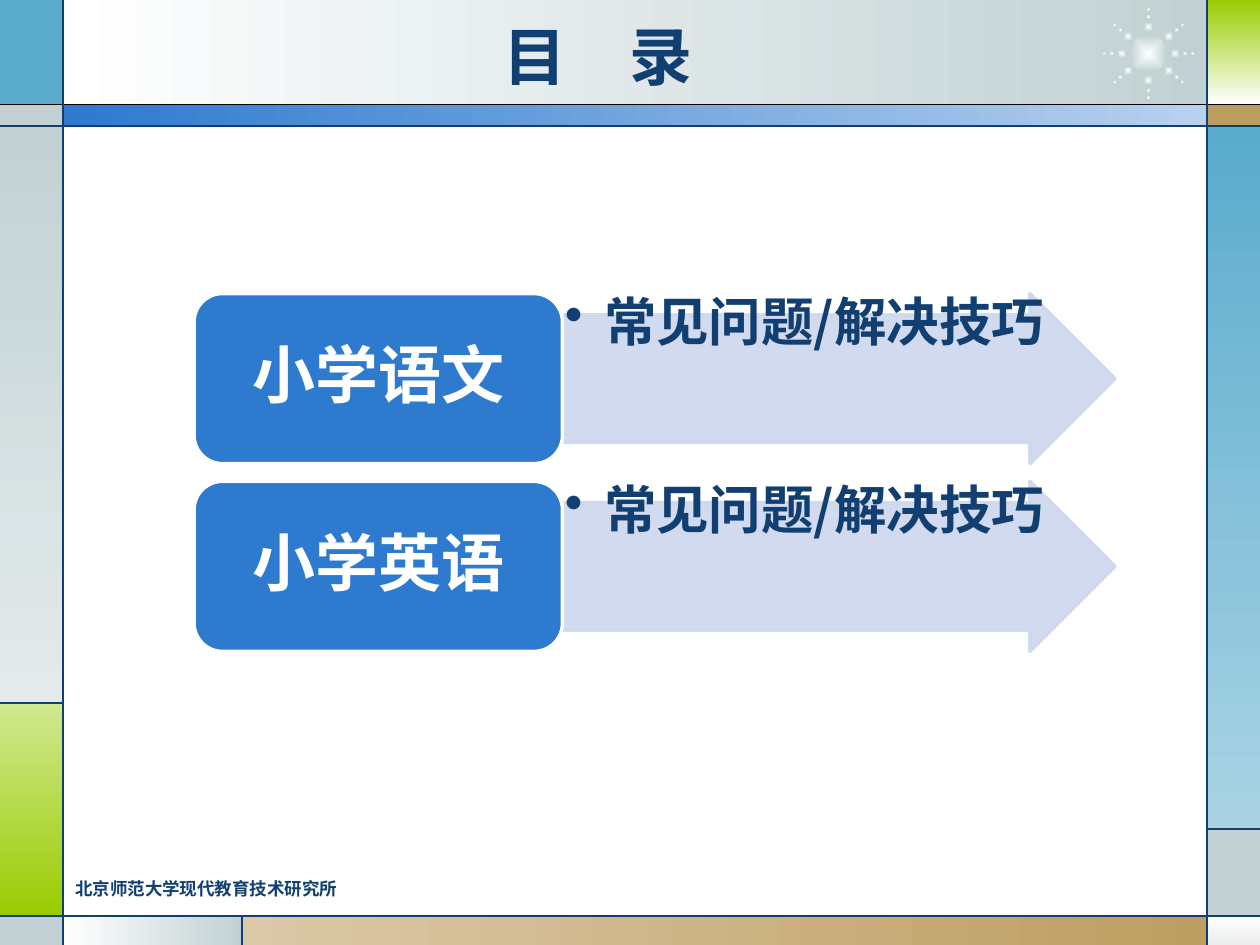
import math

from lxml import etree
from pptx import Presentation
from pptx.dml.color import RGBColor
from pptx.enum import shapes, text
from pptx.oxml.ns import qn
from pptx.util import Inches, Pt

COLORS = {
    "white": "FFFFFF", "black": "000000", "navy": "113F71", "blue": "2D7ACF",
    "ice": "B8D1EE", "arrow": "CDD7ED", "sky": "5AABCC", "pale_sky": "A9D3E4",
    "mist": "C1D1D3", "pale_mist": "E4EBEC", "lime": "99CC00", "pale_lime": "D0E890",
    "tan": "BD9E61", "pale_tan": "DBC9A8", "silver": "EDEDED",
}
FONT = "Noto Sans CJK SC"
COLUMNS, ROWS = 100, 75          # grid over the whole slide
CELL = Inches(0.1)
RIGHT, DOWN = 0, 270             # gradient directions

# Grid lines of the frame
LEFT_EDGE, RIGHT_EDGE = 5, 95.8
HEADER, BAND, FLOOR = 8.3, 10, 72.7
LIME_TOP, MIST_TOP, TAN_LEFT = 55.8, 65.8, 19.2


def grid(*cells):
    return [round(cell * CELL) for cell in cells]


def rgb(name):
    return RGBColor.from_string(COLORS[name])


def paint(shape, start, end=None, angle=RIGHT):
    if end is None:
        shape.fill.solid()
        shape.fill.fore_color.rgb = rgb(start)
        return
    shape.fill.gradient()
    shape.fill.gradient_angle = angle
    for stop, name in zip(shape.fill.gradient_stops, (start, end)):
        stop.color.rgb = rgb(name)


def add_block(slide, kind, box, *colors):
    shape = slide.shapes.add_shape(kind, *grid(*box))
    shape.shadow.inherit = False
    shape.line.fill.background()
    paint(shape, *colors)
    return shape


def write(shape, words, size, color, font=FONT, align=text.PP_ALIGN.LEFT,
          anchor=text.MSO_ANCHOR.TOP, margins=(1, 0.5)):
    frame = shape.text_frame
    frame.text = words
    frame.word_wrap = True
    frame.vertical_anchor = anchor
    frame.margin_left = frame.margin_right = grid(margins[0])[0]
    frame.margin_top = frame.margin_bottom = grid(margins[1])[0]
    paragraph = frame.paragraphs[0]
    paragraph.alignment = align
    for run in paragraph.runs:
        run.font.size, run.font.bold, run.font.name = Pt(size), True, font
        run.font.color.rgb = rgb(color)
        etree.SubElement(run.font._element, qn("a:ea"), typeface=FONT)
    return paragraph


def add_text(slide, box, *args, **kwargs):
    return write(slide.shapes.add_textbox(*grid(*box)), *args, **kwargs)


def add_frame(slide, box):
    left, top, right, bottom = box
    panels = [  # left, top, right, bottom, colours
        (LEFT_EDGE, top, RIGHT_EDGE, HEADER, "white", "mist"),
        (left, top, LEFT_EDGE, HEADER, "sky"),
        (left, HEADER, LEFT_EDGE, BAND, "mist"),
        (left, BAND, LEFT_EDGE, LIME_TOP, "mist", "pale_mist", DOWN),
        (left, LIME_TOP, LEFT_EDGE, FLOOR, "pale_lime", "lime", DOWN),
        (left, FLOOR, LEFT_EDGE, bottom, "mist"),
        (LEFT_EDGE, FLOOR, TAN_LEFT, bottom, "white", "mist"),
        (TAN_LEFT, FLOOR, RIGHT_EDGE, bottom, "pale_tan", "tan"),
        (RIGHT_EDGE, FLOOR, right, bottom, "white", "silver", DOWN),
        (RIGHT_EDGE, MIST_TOP, right, FLOOR, "mist"),
        (RIGHT_EDGE, BAND, right, MIST_TOP, "sky", "pale_sky", DOWN),
        (RIGHT_EDGE, HEADER, right, BAND, "tan"),
        (RIGHT_EDGE, top, right, HEADER, "lime", "white", DOWN),
        (LEFT_EDGE, HEADER, RIGHT_EDGE, BAND, "blue", "ice"),
    ]
    for x1, y1, x2, y2, *colors in panels:
        add_block(slide, shapes.MSO_SHAPE.RECTANGLE, (x1, y1, x2 - x1, y2 - y1), *colors)


def add_rules(slide, box):
    left, top, right, bottom = box
    rules = [
        (left, HEADER, right, HEADER, "black"),
        (left, BAND, right, BAND, "navy"),
        (left, FLOOR, right, FLOOR, "navy"),
        (LEFT_EDGE, top, LEFT_EDGE, bottom, "navy"),
        (RIGHT_EDGE, top, RIGHT_EDGE, bottom, "navy"),
        (left, LIME_TOP, LEFT_EDGE, LIME_TOP, "navy"),
        (TAN_LEFT, FLOOR, TAN_LEFT, bottom, "navy"),
        (RIGHT_EDGE, MIST_TOP, right, MIST_TOP, "navy"),
    ]
    for *ends, color in rules:
        line = slide.shapes.add_connector(shapes.MSO_CONNECTOR.STRAIGHT, *grid(*ends))
        line.line.color.rgb = rgb(color)
        line.line.width = Pt(0.75)
        etree.SubElement(line._element.spPr, qn("a:effectLst"))


def add_glow(slide, x, y, size):
    dot = add_block(slide, shapes.MSO_SHAPE.OVAL,
                    (x - size / 2, y - size / 2, size, size), "white", "mist")
    # Radial gradient from the centre
    gradient = dot._element.spPr.find(qn("a:gradFill"))
    gradient.remove(gradient.find(qn("a:lin")))
    radial = etree.SubElement(gradient, qn("a:path"), path="shape")
    etree.SubElement(radial, qn("a:fillToRect"), l="50000", t="50000", r="50000", b="50000")


def add_sunburst(slide, box):
    left, top, width, height = box
    x, y = left + width / 2, top + height / 2
    add_glow(slide, x, y, 0.41 * width)
    for angle in map(math.radians, (0, 40, 90, 140, 180, 220, 270, 320)):
        for distance, size in ((0.4, 0.05), (0.48, 0.04), (0.29, 0.1)):
            reach = distance * width
            add_glow(slide, x + reach * math.cos(angle), y + reach * math.sin(angle),
                     size * width)


def make_translucent(shape, percent):
    for color in shape._element.spPr.iter(qn("a:srgbClr")):
        etree.SubElement(color, qn("a:alpha"), val=str(percent * 1000))


def outline(shape, color):
    shape.line.color.rgb = rgb(color)
    shape.line.width = Pt(2)


def add_topic(slide, box, label, detail):
    left, top, width, height = box
    label_width = 0.4 * width
    arrow_box = (left + label_width, top, width - label_width, height)

    # Arrow with its bullet line
    arrow = add_block(slide, shapes.MSO_SHAPE.RIGHT_ARROW, arrow_box, "arrow")
    arrow.adjustments[0], arrow.adjustments[1] = 0.75, 0.5
    outline(arrow, "arrow")
    make_translucent(arrow, 90)
    paragraph = add_text(slide, arrow_box, detail, 30, "navy", margins=(0.2, 0.2))
    paragraph.line_spacing = 0.9
    properties = paragraph._p.get_or_add_pPr()
    indent = grid(3.1)[0]
    properties.set("marL", str(indent))
    properties.set("indent", str(-indent))
    etree.SubElement(properties, qn("a:buChar"), char="•")

    # Label
    card = add_block(slide, shapes.MSO_SHAPE.ROUNDED_RECTANGLE,
                     (left, top, label_width, height), "blue")
    outline(card, "white")
    write(card, label, 36, "white", align=text.PP_ALIGN.CENTER,
          anchor=text.MSO_ANCHOR.MIDDLE, margins=(1.5, 0.7)).line_spacing = 0.9


def add_topics(slide, box, topics, gap=1.4):
    left, top, width, height = box
    row = (height - gap * (len(topics) - 1)) / len(topics)
    for index, topic in enumerate(topics):
        add_topic(slide, (left, top + index * (row + gap), width, row), *topic)


def main():
    presentation = Presentation()
    presentation.slide_width, presentation.slide_height = grid(COLUMNS, ROWS)
    slide = presentation.slides.add_slide(presentation.slide_layouts[6])

    page = (0, 0, COLUMNS, ROWS)
    add_frame(slide, page)
    add_sunburst(slide, (87.5, 0.6, 7.3, 7.3))
    add_rules(slide, page)
    add_text(slide, (10.8, 1.3, 73.3, 6.2), "目\t录", 36, "navy",
             align=text.PP_ALIGN.CENTER, anchor=text.MSO_ANCHOR.MIDDLE)
    add_topics(slide, (15.4, 23.3, 73.1, 28.4), [
        ("小学语文", "常见问题/解决技巧"),
        ("小学英语", "常见问题/解决技巧"),
    ])
    add_text(slide, (5, 69.2, 23.3, 2.7), "北京师范大学现代教育技术研究所", 10, "navy",
             font="DejaVu Sans")
    presentation.save("out.pptx")


if __name__ == "__main__":
    main()
